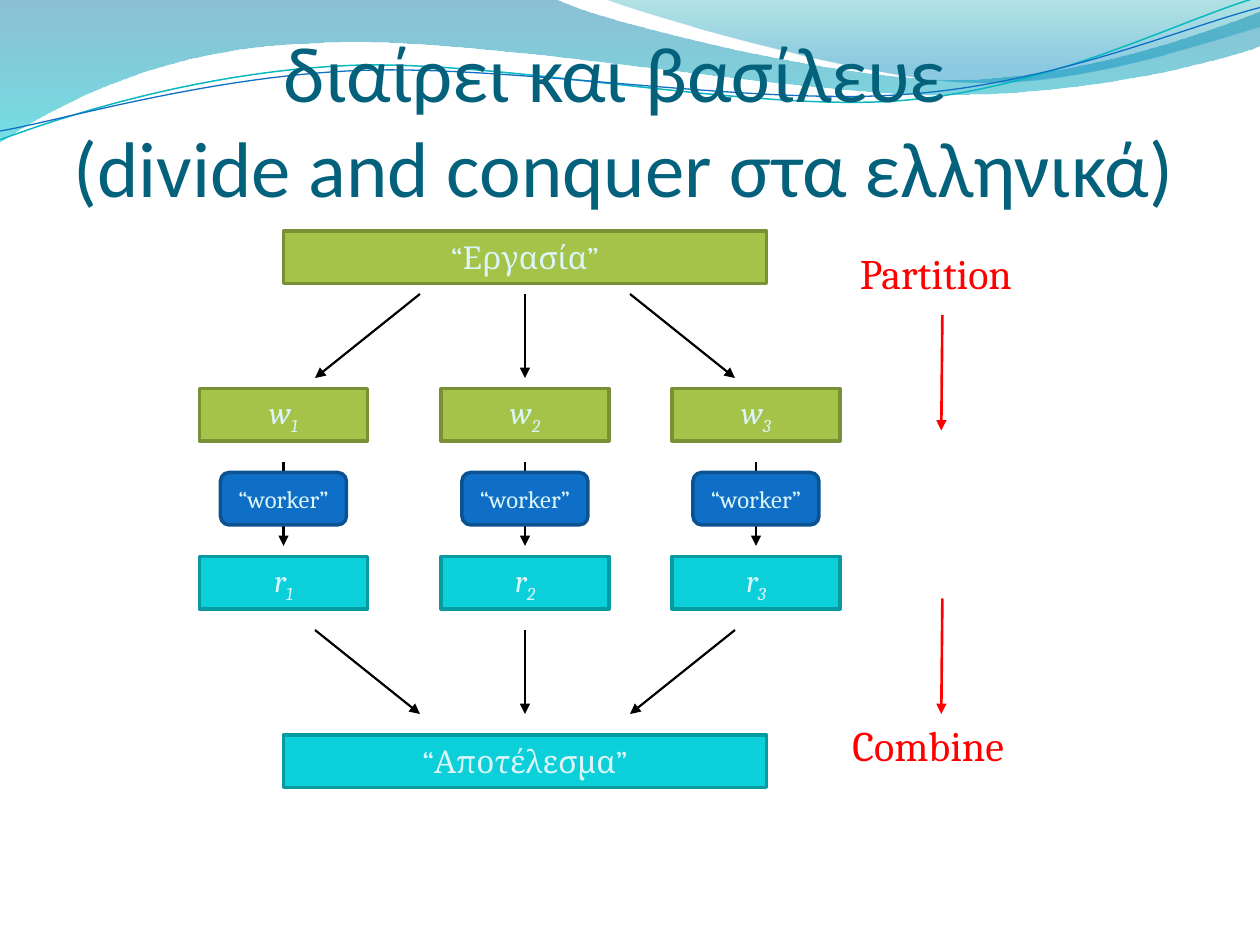
from math import cos, radians, sin
from lxml.etree import SubElement
from pptx import Presentation
from pptx.dml.color import RGBColor
from pptx.enum.lang import MSO_LANGUAGE_ID
from pptx.enum.shapes import MSO_CONNECTOR, MSO_SHAPE
from pptx.enum.text import MSO_ANCHOR, MSO_AUTO_SIZE, PP_ALIGN
from pptx.oxml.ns import qn
from pptx.util import Inches, Pt

WIDE, HIGH = Inches(10), Inches(7.5)
COLS, ROWS = 120, 90
GREEN, OLIVE = RGBColor(0xA5, 0xC2, 0x49), RGBColor(0x7A, 0x90, 0x36)
CYAN, TEAL = RGBColor(0x0B, 0xD0, 0xD9), RGBColor(0x08, 0x9A, 0xA1)
BLUE, NAVY = RGBColor(0x0F, 0x6F, 0xC6), RGBColor(0x0B, 0x52, 0x92)
PALE, DEEP = RGBColor(0xDB, 0xF5, 0xF9), RGBColor(0x04, 0x61, 0x7B)
BLACK, RED = RGBColor(0, 0, 0), RGBColor(0xFF, 0, 0)
AQUA = RGBColor(0x0A, 0xB8, 0xBF)
LEFT_TINT = (RGBColor(0, 0x74, 0xA1), 0, 45), (RGBColor(0, 0xC6, 0xCF), 1, 55)
RIGHT_TINT = (RGBColor(0, 0xA1, 0xA9), 0, 30), (RGBColor(0, 0x8B, 0xBF), 0.8, 45)
TILT = -2.7

LEFT_WAVE = [
    (0, 0), (4.4, -0.01), (4.76, 0.17, 6.64, 0.63, 7.58, 0.63),
    (8.53, 0.63, 9.58, 0.26, 10, 0.09), (10.01, 0.36),
    (9.83, 0.44, 8.7, 0.76, 7.46, 0.75), (6.22, 0.75, 3.82, 0.28, 2.57, 0.34),
    (1.29, 0.36, 0.46, 0.83, -0.01, 1.13), (0, 0)]
RIGHT_WAVE = [
    (4.79, -0.01), (5.09, 0.11, 6.82, 0.62, 7.69, 0.65),
    (8.56, 0.69, 9.61, 0.32, 10, 0.21), (10, 0), (4.79, -0.01)]
AQUA_WAVE = [
    (0, 1.11), (0.48, 0.93, 1.58, 0.57, 2.77, 0.52),
    (3.95, 0.47, 5.93, 0.89, 7.13, 0.8), (8.33, 0.71, 9.38, 0.15, 9.98, -0.02)]
BLUE_WAVE = [
    (0, 1.04), (0.47, 0.96, 1.64, 0.61, 2.83, 0.56),
    (4.03, 0.51, 5.97, 0.84, 7.17, 0.75), (8.36, 0.67, 9.41, 0.21, 10, 0.06)]


def across(col):
    return round(WIDE * col / COLS)


def down(row):
    return round(HIGH * row / ROWS)


def place(col, row, cols, rows):
    return across(col), down(row), across(cols), down(rows)


def write(frame, text, size=18, color=PALE, font="Cambria", align=PP_ALIGN.CENTER,
          slant=None, sub="", tongue=None):
    para = frame.paragraphs[0]
    para.alignment = align
    for num, line in enumerate(text.split("\n")):
        if num:
            para.add_line_break()
        para.add_run().text = line
    if sub:
        low = para.add_run()
        low.text = sub
        low._r.get_or_add_rPr().set("baseline", "-25000")
    for run in para.runs:
        run.font.size, run.font.name = Pt(size), font
        run.font.color.rgb = color
        run.font.italic = slant
        run.font.language_id = tongue


def turn(x, y, angle):
    mid_x, mid_y = 4.99, 0.58
    side, rise = x - mid_x, y - mid_y
    c, s = cos(radians(angle)), sin(radians(angle))
    return Inches(mid_x + side * c - rise * s), Inches(mid_y + side * s + rise * c)


def trace(slide, points, angle, close):
    parts = [[turn(*part[i:i + 2], -angle) for i in range(0, len(part), 2)]
             for part in points]
    path = slide.shapes.build_freeform(*parts[0][0])
    path.add_line_segments([part[-1] for part in parts[1:]], close=close)
    shape = path.convert_to_shape()
    for line, part in zip(list(shape._element.iter(qn("a:lnTo"))), parts[1:]):
        if len(part) == 3:
            line.tag = qn("a:cubicBezTo")
            for child in list(line):
                line.remove(child)
            for x, y in part:
                spot = SubElement(line, qn("a:pt"))
                spot.set("x", str(x - shape.left))
                spot.set("y", str(y - shape.top))
    shape.rotation = angle
    return shape


def wave(slide, points, tint=None, color=None, width=1, angle=0):
    shape = trace(slide, points, angle, bool(tint))
    shape.shadow.inherit = False
    if not tint:
        shape.fill.background()
        shape.line.color.rgb = color
        shape.line.width = Pt(width)
        return
    shape.line.fill.background()
    shape.fill.gradient()
    shape.fill.gradient_angle = 270
    for stop, (shade, spot, share) in zip(shape.fill.gradient_stops, tint):
        stop.color.rgb = shade
        stop.position = spot
    for tone, (shade, spot, share) in zip(shape._element.spPr.iter(qn("a:srgbClr")), tint):
        SubElement(tone, qn("a:alpha")).set("val", str(share * 1000))


def box(slide, spot, text, fill, edge, kind=MSO_SHAPE.RECTANGLE, **look):
    shape = slide.shapes.add_shape(kind, *place(*spot))
    shape.shadow.inherit = False
    shape.fill.solid()
    shape.fill.fore_color.rgb = fill
    shape.line.color.rgb = edge
    shape.line.width = Pt(2)
    shape.text_frame.vertical_anchor = MSO_ANCHOR.MIDDLE
    write(shape.text_frame, text, **look)


def arrow(slide, start, end, color=BLACK, width=1.25):
    line = slide.shapes.add_connector(
        MSO_CONNECTOR.STRAIGHT, across(start[0]), down(start[1]), across(end[0]), down(end[1]))
    line.line.color.rgb = color
    line.line.width = Pt(width)
    SubElement(line.line._get_or_add_ln(), qn("a:tailEnd")).set("type", "triangle")
    SubElement(line._element.spPr, qn("a:effectLst"))


def label(slide, spot, text):
    frame = slide.shapes.add_textbox(*place(*spot)).text_frame
    frame.word_wrap = False
    frame.auto_size = MSO_AUTO_SIZE.SHAPE_TO_FIT_TEXT
    write(frame, text, size=24, color=RED, align=PP_ALIGN.LEFT)


def title(slide, text):
    frame = slide.shapes.add_textbox(*place(4.2, 5.3, 108.7, 15)).text_frame
    frame.word_wrap = True
    frame.vertical_anchor = MSO_ANCHOR.BOTTOM
    frame.margin_left = frame.margin_right = frame.margin_bottom = 0
    write(frame, text, size=45, color=DEEP, font="Calibri")


def main():
    deck = Presentation()
    deck.slide_width, deck.slide_height = WIDE, HIGH
    slide = deck.slides.add_slide(deck.slide_layouts[6])
    greek = MSO_LANGUAGE_ID.GREEK

    wave(slide, LEFT_WAVE, tint=LEFT_TINT)
    wave(slide, RIGHT_WAVE, tint=RIGHT_TINT)
    wave(slide, AQUA_WAVE, color=AQUA, width=0.85, angle=TILT)
    wave(slide, BLUE_WAVE, color=BLUE, width=0.75, angle=TILT)
    title(slide, "διαίρει και βασίλευε\n (divide and conquer στα ελληνικά)")

    box(slide, (27, 22, 46, 5), "“Εργασία”", GREEN, OLIVE, tongue=greek)
    box(slide, (27, 70, 46, 5), "“Αποτέλεσμα”", CYAN, TEAL, tongue=greek)
    lanes = zip((27, 50, 72), (40, 50, 60), (30, 50, 70))
    for num, (mid, near, far) in enumerate(lanes, 1):
        arrow(slide, (near, 28), (far, 36))
        box(slide, (mid - 8, 37, 16, 5), "w", GREEN, OLIVE, slant=True, sub=str(num))
        arrow(slide, (mid, 44), (mid, 52))
        box(slide, (mid - 6, 45, 12, 5), "“worker”", BLUE, NAVY,
            kind=MSO_SHAPE.ROUNDED_RECTANGLE, size=14)
        box(slide, (mid - 8, 53, 16, 5), "r", CYAN, TEAL, slant=True, sub=str(num))
        arrow(slide, (far, 60), (near, 68))

    label(slide, (80.7, 23, 18.8, 6.1), "Partition")
    label(slide, (80, 67.9, 19.7, 6.1), "Combine")
    for top in (30, 57):
        arrow(slide, (89.75, top), (89.65, top + 11), color=RED, width=1.5)

    deck.save("out.pptx")


if __name__ == "__main__":
    main()
